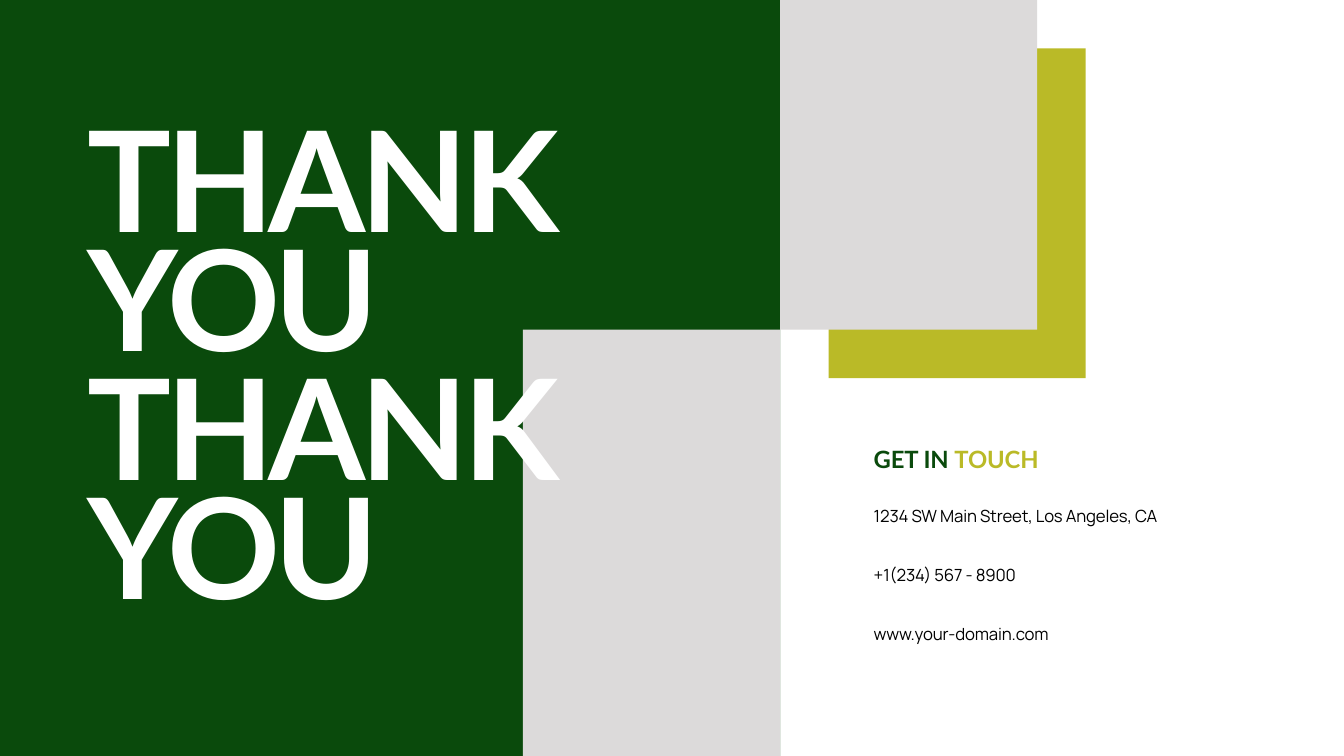
import pptx
import pptx.dml.color
import pptx.enum.shapes
import pptx.enum.text
import pptx.util

Cm = pptx.util.Cm
Pt = pptx.util.Pt
RGBColor = pptx.dml.color.RGBColor
ANCHOR = pptx.enum.text.MSO_ANCHOR

GREEN = RGBColor(0x0A, 0x4A, 0x0C)
OLIVE = RGBColor(0xBA, 0xBA, 0x27)
GREY = RGBColor(0xDC, 0xDA, 0xDA)
WHITE = RGBColor(0xFF, 0xFF, 0xFF)
BLACK = RGBColor(0x00, 0x00, 0x00)

SLIDE_W, SLIDE_H = 33.87, 19.05
PANEL_W = 19.66               # green panel
PHOTO_W, PHOTO_H = 6.48, 8.31  # upper grey block
OFFSET = 1.22                 # shift of the olive block
CONTACT_X, CONTACT_W = 21.77, 9.04


class SlideBuilder:
    heading_font = "Lato"
    body_font = "Manrope"

    def __init__(self, prs):
        self.s = prs.slides.add_slide(prs.slide_layouts[6])

    def block(self, x, y, w, h, color):
        sp = self.s.shapes.add_shape(
            pptx.enum.shapes.MSO_SHAPE.RECTANGLE, Cm(x), Cm(y), Cm(w), Cm(h))
        sp.shadow.inherit = False
        sp.fill.solid()
        sp.fill.fore_color.rgb = color
        sp.line.fill.background()

    def text(self, x, y, w, h, parts, size, font, bold=False,
             tracking=-0.1, leading=None, anchor=ANCHOR.TOP):
        """Add one paragraph; parts is a list of (text, colour)."""
        sp = self.s.shapes.add_textbox(Cm(x), Cm(y), Cm(w), Cm(h))
        tf = sp.text_frame
        tf.word_wrap = True
        tf.auto_size = pptx.enum.text.MSO_AUTO_SIZE.SHAPE_TO_FIT_TEXT
        tf.vertical_anchor = anchor
        p = tf.paragraphs[0]
        if leading:
            p.line_spacing = Pt(leading)
        for words, color in parts:
            r = p.add_run()
            r.text = words
            r.font.name = font
            r.font.size = Pt(size)
            r.font.bold = bold
            r.font.color.rgb = color
            r.font._element.set("spc", str(round(tracking * 100)))

    def title(self, y, words):
        self.text(1.96, y, 12.93, 6.32, [(words, WHITE)], 100,
                  self.heading_font, bold=True, tracking=-3.8, leading=85)

    def heading(self, y, parts):
        self.text(CONTACT_X, y, CONTACT_W, 0.99, parts, 17,
                  self.heading_font, bold=True, anchor=ANCHOR.BOTTOM)

    def contact(self, y, words):
        self.text(CONTACT_X, y, CONTACT_W, 0.89, [(words, BLACK)], 12,
                  self.body_font, leading=18)


def main():
    prs = pptx.Presentation()
    prs.slide_width, prs.slide_height = Cm(SLIDE_W), Cm(SLIDE_H)
    page = SlideBuilder(prs)

    # Colour blocks
    page.block(PANEL_W + OFFSET, OFFSET, PHOTO_W, PHOTO_H, OLIVE)
    page.block(0, 0, PANEL_W, SLIDE_H, GREEN)
    page.block(PANEL_W - PHOTO_W, PHOTO_H, PHOTO_W, SLIDE_H - PHOTO_H, GREY)
    page.block(PANEL_W, 0, PHOTO_W, PHOTO_H, GREY)

    # Contact details
    page.heading(11.07, [("GET IN ", GREEN), ("TOUCH", OLIVE)])
    details = ["1234 SW Main Street, Los Angeles, CA",
               "+1(234) 567 - 8900",
               "www.your-domain.com"]
    for i, words in enumerate(details):
        page.contact(12.49 + 1.49 * i, words)

    # Repeated title
    for y in (3.43, 9.7):
        page.title(y, "THANK YOU")

    prs.save("out.pptx")


if __name__ == "__main__":
    main()
